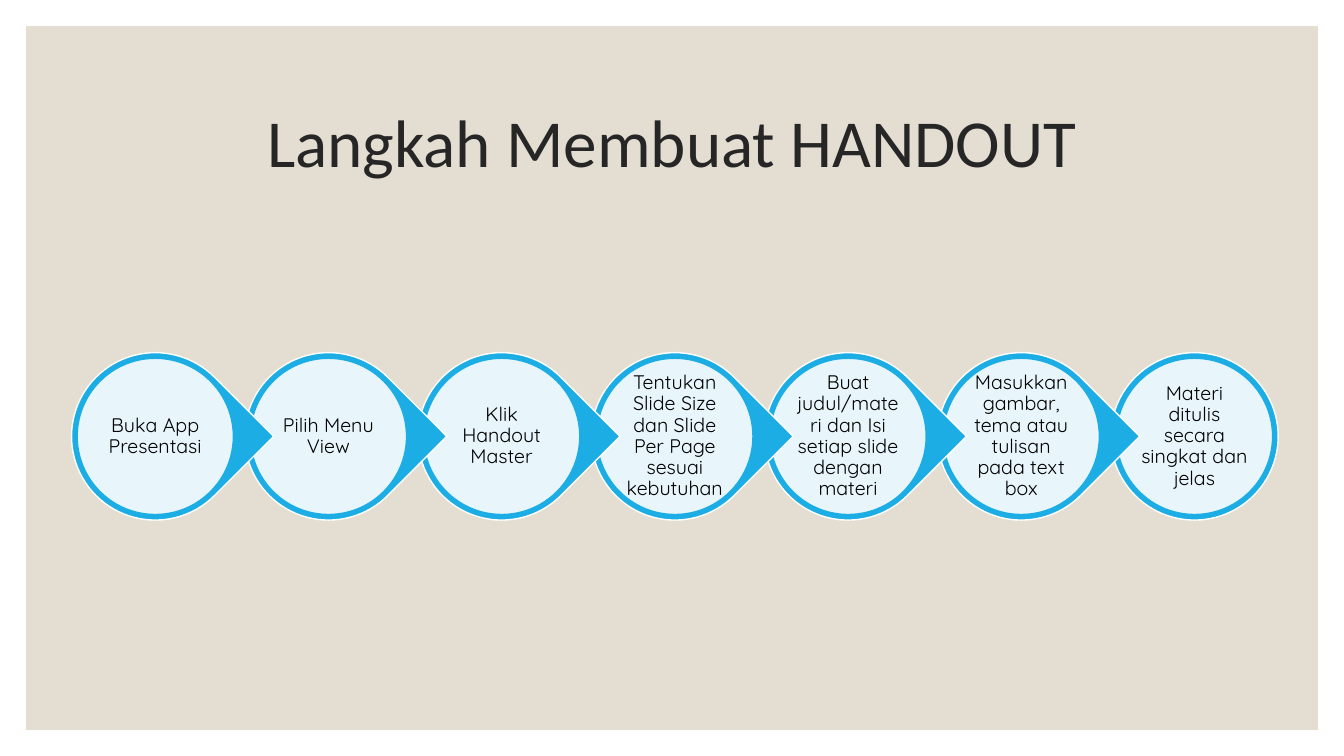
import pptx
import pptx.util
import pptx.dml.color
import pptx.enum.shapes
import pptx.enum.text
import pptx.oxml.ns
from lxml import etree

Pt = pptx.util.Pt
Kind = pptx.enum.shapes.MSO_SHAPE
Align = pptx.enum.text.PP_ALIGN
Anchor = pptx.enum.text.MSO_ANCHOR

COLORS = {
    "panel": "E3DED1",
    "title": "262626",
    "blue": "1CADE4",
    "white": "FFFFFF",
    "black": "000000",
}
STEPS = [
    "Buka App Presentasi",
    "Pilih Menu View",
    "Klik Handout Master",
    "Tentukan Slide Size dan Slide Per Page sesuai kebutuhan",
    "Buat judul/materi dan Isi setiap slide dengan materi",
    "Masukkan gambar, tema atau tulisan pada text box",
    "Materi ditulis secara singkat dan jelas",
]


def color(name):
    return pptx.dml.color.RGBColor.from_string(COLORS[name])


def draw(shapes, kind, box, fill, line=None):
    shape = shapes.add_shape(kind, *map(Pt, box))
    shape.shadow.inherit = False
    shape.fill.solid()
    shape.fill.fore_color.rgb = color(fill)
    if line:
        shape.line.color.rgb = color(line)
        shape.line.width = Pt(1)
    else:
        shape.line.fill.background()
    return shape


def fade(shape, share):
    tint = shape.fill._xPr.find(".//" + pptx.oxml.ns.qn("a:srgbClr"))
    alpha = etree.SubElement(tint, pptx.oxml.ns.qn("a:alpha"))
    alpha.set("val", str(share * 1000))


def write(frame, text, size, font, tone):
    frame.word_wrap = True
    frame.vertical_anchor = Anchor.MIDDLE
    para = frame.paragraphs[0]
    para.alignment = Align.CENTER
    para.line_spacing = 0.9
    run = para.add_run()
    run.text = text
    run.font.size = Pt(size)
    run.font.name = font
    run.font.color.rgb = color(tone)


def inset(box, gap):
    left, top, width, height = box
    return left + gap, top + gap, width - 2 * gap, height - 2 * gap


def add_panel(slide, box):
    panel = draw(slide.shapes, Kind.RECTANGLE, box, "panel")
    slide.shapes.title.element.addprevious(panel.element)


def add_title(slide, box, text):
    title = slide.shapes.title
    title.left, title.top, title.width, title.height = map(Pt, box)
    write(title.text_frame, text, 48, "Calibri", "title")


def add_step(shapes, box, text, last):
    kind = Kind.OVAL if last else Kind.TEAR
    drop = draw(shapes, kind, box, "blue", "white")
    if not last:
        drop.adjustments[0] = 1
        drop.rotation = 45
    disc = draw(shapes, Kind.OVAL, inset(box, 4), "white", "blue")
    fade(disc, 90)
    label = shapes.add_textbox(*map(Pt, inset(box, 20)))
    frame = label.text_frame
    frame.margin_left = frame.margin_right = Pt(1.4)
    frame.margin_top = frame.margin_bottom = Pt(1.4)
    write(frame, text, 14, "Quicksand", "black")


def add_chain(slide, box, steps):
    left, top, width, size = box
    pitch = (width - size) / (len(steps) - 1)
    group = slide.shapes.add_group_shape()
    for index in reversed(range(len(steps))):
        spot = (left + index * pitch, top, size, size)
        add_step(group.shapes, spot, steps[index], index == len(steps) - 1)


def main():
    deck = pptx.Presentation()
    deck.slide_width = Pt(960)
    deck.slide_height = Pt(540)
    slide = deck.slides.add_slide(deck.slide_layouts[5])
    add_panel(slide, inset((0, 0, 960, 540), 18.7))
    add_title(slide, (84, 50.4, 792, 108), "Langkah Membuat HANDOUT")
    add_chain(slide, (51.1, 251.9, 861.9, 119.6), STEPS)
    deck.save("out.pptx")


if __name__ == "__main__":
    main()
